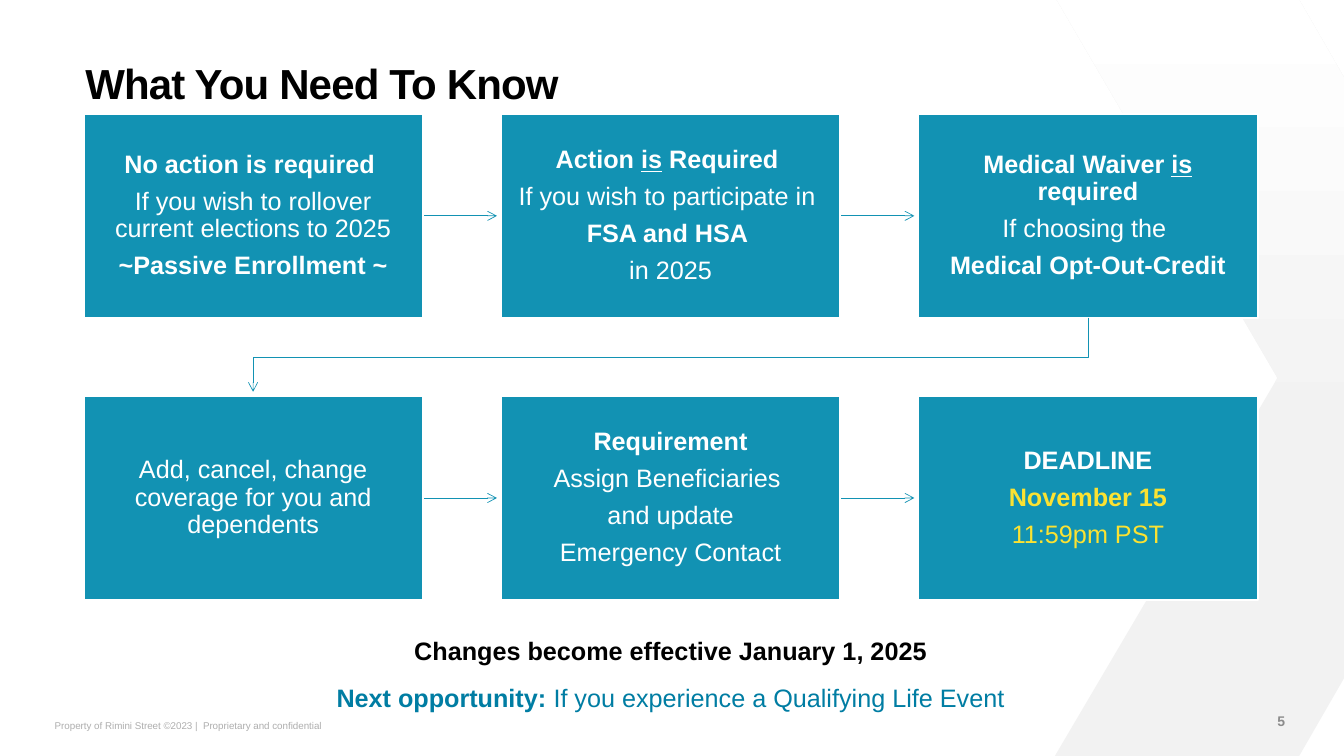
from pptx import Presentation
from pptx.dml.color import RGBColor
from pptx.enum.shapes import MSO_CONNECTOR, MSO_SHAPE
from pptx.enum.text import MSO_ANCHOR, MSO_AUTO_SIZE, PP_ALIGN
from pptx.oxml.ns import qn
from pptx.util import Pt
from lxml.etree import SubElement

TEAL = RGBColor(0x12, 0x92, 0xB3)
DARK_TEAL = RGBColor(0x00, 0x7D, 0xA3)
YELLOW = RGBColor(0xFB, 0xE2, 0x32)
WHITE = RGBColor(0xFF, 0xFF, 0xFF)
BLACK = RGBColor(0x00, 0x00, 0x00)
PALE = RGBColor(0xF2, 0xF2, 0xF2)
FOOT_GREY = RGBColor(0xAE, 0xAE, 0xAE)
PAGE_GREY = RGBColor(0x8C, 0x8C, 0x8C)

COLS, CARD_W, CARD_H = 3, 242.4, 145.4
ARROW_LEN = 53
CARDS = [
    [[("No action is required ", "b")],
     [("If you wish to rollover current elections to 2025", "")],
     [("~Passive Enrollment ~", "b")]],
    [[("Action ", "b"), ("is", "bu"), (" Required ", "b")],
     [("If you wish to participate in ", "")],
     [("FSA and HSA ", "b")],
     [("in 2025", "")]],
    [[("Medical Waiver ", "b"), ("is", "bu"), (" required", "b")],
     [("If choosing the ", "")],
     [("Medical Opt-Out-Credit", "b")]],
    [[("Add, cancel, change coverage for you and dependents", "")]],
    [[("Requirement", "b")],
     [("Assign Beneficiaries ", "")],
     [("and update", "")],
     [("Emergency Contact", "")]],
    [[("DEADLINE", "b")],
     [("November 15", "b", YELLOW)],
     [("11:59pm PST", "", YELLOW)]],
]


def place(sp, box):
    """Move a shape to a box of left, top, width and height in points."""
    sp.left, sp.top, sp.width, sp.height = map(Pt, box)


def write(sp, paras, size, color, align=PP_ALIGN.LEFT, anchor=MSO_ANCHOR.TOP,
          inset=(0, 0), after=0, spacing=1.0, wrap=True):
    """Fill a shape with paragraphs of (text, style[, colour]) runs."""
    tf = sp.text_frame
    tf.auto_size = MSO_AUTO_SIZE.NONE
    tf.word_wrap = wrap
    tf.vertical_anchor = anchor
    tf.margin_left = tf.margin_right = Pt(inset[0])
    tf.margin_top = tf.margin_bottom = Pt(inset[1])
    for i, runs in enumerate(paras):
        p = tf.add_paragraph() if i else tf.paragraphs[0]
        p.alignment = align
        p.space_before = Pt(0)
        p.space_after = Pt(after)
        p.line_spacing = spacing
        for text, style, *tint in runs:
            r = p.add_run()
            r.text = text
            r.font.name = "Arial"
            r.font.size = Pt(size)
            r.font.bold = "b" in style
            r.font.underline = "u" in style
            r.font.color.rgb = tint[0] if tint else color


def style_arrow(sp):
    """Give a line its colour, weight and arrowhead, without a shadow."""
    sp.line.color.rgb = TEAL
    sp.line.width = Pt(0.5)
    SubElement(sp.line._get_or_add_ln(), qn("a:tailEnd"), type="arrow")
    pr = sp._element.spPr
    if pr.find(qn("a:effectLst")) is None:
        SubElement(pr, qn("a:effectLst"))


def add_backdrop(s, box):
    """Draw the pale chevron along the right edge."""
    x, y, w, h = box
    notch, slant = w - 32, 55.5
    points = [(x + notch, y), (x + w, y + slant), (x + w, y + h - slant),
              (x + notch, y + h), (x, y + h), (x + 159, y + h / 2)]
    fb = s.shapes.build_freeform(Pt(x + 1.5), Pt(y))
    fb.add_line_segments([(Pt(a), Pt(b)) for a, b in points], close=True)
    sp = fb.convert_to_shape()
    sp.shadow.inherit = False
    sp.line.fill.background()
    sp.fill.gradient()
    sp.fill.gradient_angle = 90
    for stop, (pos, color) in zip(sp.fill.gradient_stops, [(0.41, PALE), (1, WHITE)]):
        stop.position = pos
        stop.color.rgb = color


def add_title(s, box):
    """Set the slide title."""
    sp = s.shapes.title
    place(sp, box)
    write(sp, [[("What You Need To Know", "b")]], 30, BLACK, spacing=0.9)
    for r in sp.text_frame.paragraphs[0].runs:
        r.font._element.set("spc", "-60")


def add_closing(s, box):
    """Set the closing lines in the body placeholder."""
    sp = s.placeholders[1]
    place(sp, box)
    for_next = [("Next opportunity: ", "b"),
                ("If you experience a Qualifying Life Event", "")]
    lines = [[("Changes become effective January 1, 2025", "b", BLACK)], for_next]
    write(sp, lines, 18, DARK_TEAL, align=PP_ALIGN.CENTER, after=12)
    for p in sp.text_frame.paragraphs:
        pr = p._p.get_or_add_pPr()
        pr.set("marL", "0")
        pr.set("indent", "0")
        SubElement(pr, qn("a:buNone"))


def add_card(s, box, paras):
    """Draw one teal card with its centred text."""
    sp = s.shapes.add_shape(MSO_SHAPE.RECTANGLE, *map(Pt, box))
    sp.shadow.inherit = False
    sp.fill.solid()
    sp.fill.fore_color.rgb = TEAL
    sp.line.color.rgb = WHITE
    sp.line.width = Pt(1.5)
    write(sp, paras, 18, WHITE, align=PP_ALIGN.CENTER, anchor=MSO_ANCHOR.MIDDLE,
          inset=(11.5, 12), after=7, spacing=0.9)


def add_flow(s, box):
    """Lay out two rows of cards joined by arrows."""
    x, y, w, h = box
    step_x, step_y = (w - CARD_W) / (COLS - 1), h - CARD_H
    for i, paras in enumerate(CARDS):
        row, col = divmod(i, COLS)
        left, top = x + col * step_x, y + row * step_y
        if col < COLS - 1:
            start, mid = left + CARD_W, top + CARD_H / 2
            style_arrow(s.shapes.add_connector(
                MSO_CONNECTOR.STRAIGHT, Pt(start), Pt(mid), Pt(start + ARROW_LEN), Pt(mid)))
        add_card(s, (left, top, CARD_W, CARD_H), paras)
    first, last = x + CARD_W / 2, x + w - CARD_W / 2
    bottom, turn = y + CARD_H, y + h / 2
    fb = s.shapes.build_freeform(Pt(last), Pt(bottom))
    points = [(last, turn), (first, turn), (first, bottom + ARROW_LEN)]
    fb.add_line_segments([(Pt(a), Pt(b)) for a, b in points], close=False)
    sp = fb.convert_to_shape()
    sp.fill.background()
    style_arrow(sp)


def add_footer(s, box):
    """Write the ownership line and the page number."""
    x, y, w, h = box
    owner = s.shapes.add_textbox(*map(Pt, (x, y + 10, 206.5, h - 10)))
    write(owner, [[("Property of Rimini Street ©2023 |  Proprietary and confidential", "")]],
          7, FOOT_GREY, inset=(3.6, 3.6), after=12, wrap=False)
    page = s.shapes.add_textbox(*map(Pt, (x + w - 47.5, y, 47.5, h)))
    write(page, [[("5", "b")]], 10, PAGE_GREY, anchor=MSO_ANCHOR.MIDDLE, after=6)


def main():
    """Build the slide and save it."""
    prs = Presentation()
    prs.slide_width, prs.slide_height = Pt(960), Pt(540)
    s = prs.slides.add_slide(prs.slide_layouts[1])
    add_backdrop(s, (753.5, 0, 206.5, 540))
    add_title(s, (61, 45.5, 839, 33))
    add_closing(s, (59, 453.5, 840, 57))
    add_flow(s, (59.6, 81.5, 838.7, 346.9))
    add_footer(s, (35.5, 500.5, 924.5, 28.5))
    prs.save("out.pptx")


if __name__ == "__main__":
    main()
